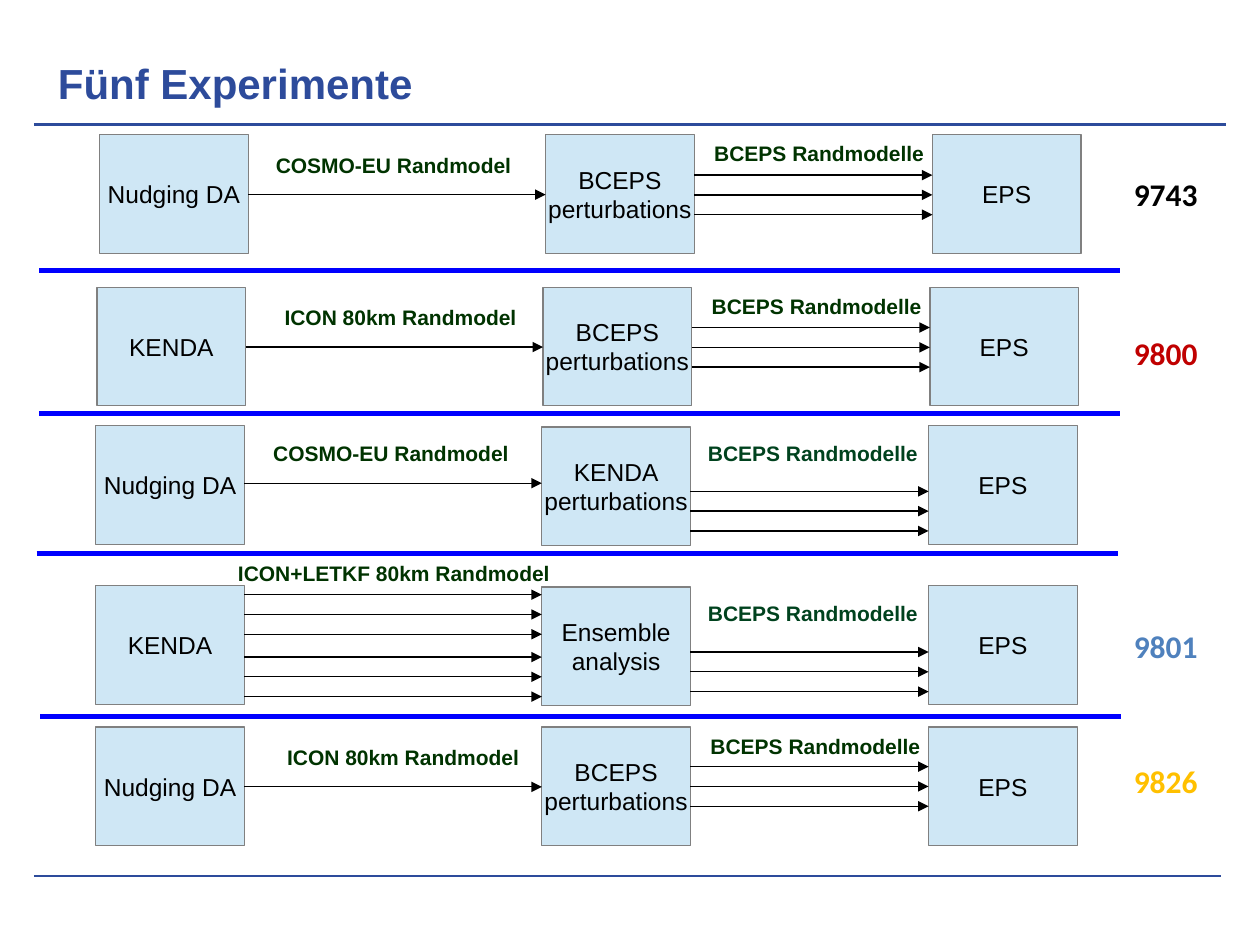
from lxml import etree
from pptx import Presentation
from pptx.dml.color import RGBColor
from pptx.enum.shapes import MSO_CONNECTOR, MSO_SHAPE
from pptx.enum.text import MSO_ANCHOR, PP_ALIGN
from pptx.oxml.ns import qn
from pptx.util import Inches, Pt

RECT = MSO_SHAPE.RECTANGLE
STRAIGHT = MSO_CONNECTOR.STRAIGHT
TOP, MIDDLE, BOTTOM = MSO_ANCHOR.TOP, MSO_ANCHOR.MIDDLE, MSO_ANCHOR.BOTTOM
LEFT, CENTER = PP_ALIGN.LEFT, PP_ALIGN.CENTER
color = RGBColor.from_string

NAVY, BLUE, BLACK, GREEN, PINE = "2D4B9B", "0000FF", "000000", "003300", "00421E"
WIDE, HIGH = 1.18, 0.94      # size of a box
COLS = (0, 3.54, 6.61)       # box columns, from the left of a row
STEP = 0.157                 # gap between parallel arrows


def write(shape, lines, size, hue, bold=True, font="Arial",
          align=LEFT, anchor=TOP, wrap=True):
    frame = shape.text_frame
    frame.word_wrap = wrap
    frame.vertical_anchor = anchor
    for i, line in enumerate(lines):
        para = frame.paragraphs[0] if i == 0 else frame.add_paragraph()
        para.alignment = align
        run = para.add_run()
        run.text = line
        run.font.size = Pt(size)
        run.font.name = font
        run.font.bold = bold
        run.font.color.rgb = color(hue)


def draw(shapes, x, end, y, hue, width, arrow=False):
    """Add a level line, with an arrowhead at its end if asked."""
    line = shapes.add_connector(STRAIGHT, Inches(x), Inches(y), Inches(end), Inches(y))
    line.line.color.rgb = color(hue)
    line.line.width = Pt(width)
    if arrow:
        etree.SubElement(line.line._get_or_add_ln(), qn("a:tailEnd"), type="triangle")
    etree.SubElement(line._element.spPr, qn("a:effectLst"))


deck = Presentation()
deck.slide_width, deck.slide_height = Inches(10), Inches(7.5)
slide = deck.slides.add_slide(deck.slide_layouts[6])

draw(slide.shapes, 0.27, 9.73, 0.99, NAVY, 2)
draw(slide.shapes, 0.27, 9.69, 6.95, NAVY, 1.19)
title = slide.shapes.add_textbox(Inches(0.46), Inches(0.39), Inches(9.14), Inches(0.47))
frame = title.text_frame
frame.margin_left = frame.margin_right = frame.margin_top = frame.margin_bottom = 0
write(title, ["Fünf Experimente"], 24, NAVY, anchor=BOTTOM)

cosmo, icon, letkf = "COSMO-EU Randmodel", "ICON 80km Randmodel", "ICON+LETKF 80km Randmodel"
nudge, pert = "Nudging DA", "perturbations"
one = [0.475]
six = [start + i * STEP for start in (0.07, 0.565) for i in range(3)]

# left, top, drop of middle box, source, middle lines,
# label (text, x, y, width), arrow offsets,
# second label (x, y, colour), offset of its first arrow,
# number (text, y, colour), rule below (x, y)
rows = [
    (0.79, 1.07, 0, nudge, ["BCEPS", pert], (cosmo, 2.09, 1.16, 2.02), one,
     (5.57, 1.07, GREEN), 0.32, ("9743", 1.34, BLACK), (0.31, 2.15)),
    (0.77, 2.28, 0, "KENDA", ["BCEPS", pert], (icon, 2.16, 2.37, 2.02), one,
     (5.55, 2.28, GREEN), 0.32, ("9800", 2.6, "C00000"), (0.31, 3.28)),
    (0.76, 3.38, 0.01, nudge, ["KENDA", pert], (cosmo, 2.07, 3.45, 2.02), [0.455],
     (5.52, 3.45, PINE), 0.52, None, (0.29, 4.39)),
    (0.76, 4.65, 0.01, "KENDA", ["Ensemble", "analysis"], (letkf, 1.79, 4.4, 2.68), six,
     (5.52, 4.72, PINE), 0.525, ("9801", 4.93, "4F81BD"), (0.32, 5.69)),
    (0.76, 5.77, 0, nudge, ["BCEPS", pert], (icon, 2.18, 5.86, 2.02), one,
     (5.54, 5.77, GREEN), 0.315, ("9826", 6, "FFC000"), None),
]

for left, top, drop, source, middle, label, feed, side, first, number, rule in rows:
    group = slide.shapes.add_group_shape().shapes

    for col, lines, dy in zip(COLS, ([source], middle, ["EPS"]), (0, drop, 0)):
        box = group.add_shape(RECT, Inches(left + col), Inches(top + dy),
                              Inches(WIDE), Inches(HIGH))
        box.shadow.inherit = False
        box.fill.solid()
        box.fill.fore_color.rgb = color("CFE7F5")
        box.line.color.rgb = color("808080")
        box.line.width = Pt(0.75)
        write(box, lines, 14, BLACK, bold=False, align=CENTER, anchor=MIDDLE, wrap=False)

    fan = [first + i * STEP for i in range(3)]
    for start, end, ys in ((COLS[0], COLS[1], feed), (COLS[1], COLS[2], fan)):
        for y in ys:
            draw(group, left + start + WIDE, left + end, top + y, BLACK, 0.75, arrow=True)

    text, x, y, width = label
    notes = [(text, x, y, width, 0.3, 12, GREEN, "Arial")]
    x, y, hue = side
    notes.append(("BCEPS Randmodelle", x, y, 1.85, 0.3, 12, hue, "Arial"))
    if number:
        text, y, hue = number
        notes.append((text, 8.9, y, 0.71, 0.4, 18, hue, "Calibri"))
    for text, x, y, width, height, size, hue, font in notes:
        note = group.add_textbox(Inches(x), Inches(y), Inches(width), Inches(height))
        note.text_frame.margin_right = 0
        write(note, [text], size, hue, font=font)

    if rule:
        x, y = rule
        draw(group, x, x + 8.58, y, BLUE, 2.83)

deck.save("out.pptx")
